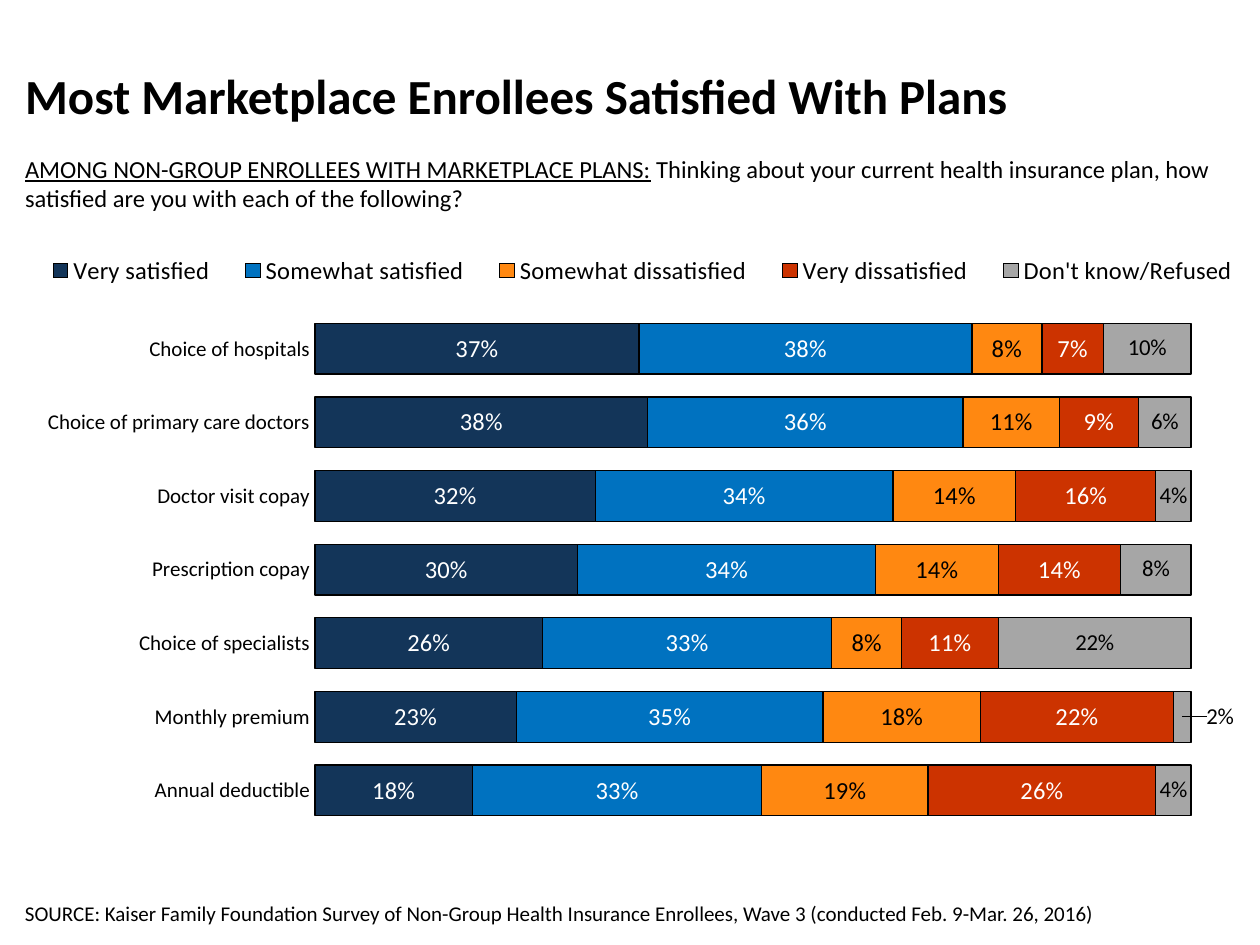
from pptx import Presentation
from pptx.chart.data import CategoryChartData
from pptx.dml.color import RGBColor
from pptx.enum.chart import XL_CHART_TYPE, XL_LEGEND_POSITION, XL_TICK_MARK
from pptx.enum.text import MSO_ANCHOR, PP_ALIGN
from pptx.oxml import parse_xml
from pptx.oxml.ns import nsdecls
from pptx.util import Inches, Pt

BAR_STACKED = XL_CHART_TYPE.BAR_STACKED
LEGEND_TOP = XL_LEGEND_POSITION.TOP
TICK_NONE = XL_TICK_MARK.NONE
MIDDLE, BOTTOM = MSO_ANCHOR.MIDDLE, MSO_ANCHOR.BOTTOM
LEFT = PP_ALIGN.LEFT

FONT = "Calibri"
BLACK = RGBColor(0x00, 0x00, 0x00)
WHITE = RGBColor(0xFF, 0xFF, 0xFF)
NAVY = RGBColor(0x13, 0x35, 0x59)
BLUE = RGBColor(0x00, 0x72, 0xC0)
ORANGE = RGBColor(0xFF, 0x88, 0x11)
RED = RGBColor(0xCC, 0x33, 0x00)
GREY = RGBColor(0xA6, 0xA6, 0xA6)

PLAN_FEATURES = ["Choice of hospitals", "Choice of primary care doctors",
                 "Doctor visit copay", "Prescription copay",
                 "Choice of specialists", "Monthly premium",
                 "Annual deductible"]

# Answer, percentages per feature, bar colour, label colour, label size
ANSWERS = [
    ("Very satisfied", [37, 38, 32, 30, 26, 23, 18], NAVY, WHITE, 14),
    ("Somewhat satisfied", [38, 36, 34, 34, 33, 35, 33], BLUE, WHITE, 14),
    ("Somewhat dissatisfied", [8, 11, 14, 14, 8, 18, 19], ORANGE, BLACK, 14),
    ("Very dissatisfied", [7, 9, 16, 14, 11, 22, 26], RED, WHITE, 14),
    ("Don't know/Refused", [10, 6, 4, 8, 22, 2, 4], GREY, BLACK, 13),
]


def format_font(font, size, color=BLACK, **extra):
    values = {"name": FONT, "size": Pt(size), **extra}
    for attribute, value in values.items():
        setattr(font, attribute, value)
    font.color.rgb = color


def place(shape, left, top, width, height):
    box = {"left": left, "top": top, "width": width, "height": height}
    for attribute, value in box.items():
        setattr(shape, attribute, Inches(value))


def write_runs(frame, runs, anchor):
    """Fill a frame with one left-aligned paragraph of (text, format) runs."""
    frame.word_wrap = True
    frame.vertical_anchor = anchor
    paragraph = frame.paragraphs[0]
    paragraph.alignment = LEFT
    for text, values in runs:
        run = paragraph.add_run()
        run.text = text
        format_font(run.font, **values)


def add_text(slide, box, runs, anchor=MSO_ANCHOR.TOP):
    textbox = slide.shapes.add_textbox(*map(Inches, box))
    write_runs(textbox.text_frame, runs, anchor)


def manual_layout(x, y, width=None, height=None, mode="edge", inner=False):
    parts = []
    if inner:
        parts.append('<c:layoutTarget val="inner"/>')
    if mode == "edge":
        parts.append('<c:xMode val="edge"/><c:yMode val="edge"/>')
    sizes = {"x": x, "y": y, "w": width, "h": height}
    parts += [f'<c:{tag} val="{value}"/>'
              for tag, value in sizes.items() if value is not None]
    return parse_xml(f'<c:layout {nsdecls("c")}><c:manualLayout>'
                     f'{"".join(parts)}</c:manualLayout></c:layout>')


def set_layout(parent, layout, position):
    for old in parent.findall(layout.tag):
        parent.remove(old)
    parent.insert(position, layout)


def shift_label(labels, index, x):
    """Move one value label sideways by a share of the chart width."""
    flags = "".join(f'<c:show{name} val="{int(name == "Val")}"/>' for name in
                    ("LegendKey", "Val", "CatName", "SerName", "Percent",
                     "BubbleSize"))
    label = parse_xml(f'<c:dLbl {nsdecls("c")}><c:idx val="{index}"/>'
                      f'{flags}</c:dLbl>')
    label.insert(1, manual_layout(x, 0, mode="offset"))
    labels._element.insert(0, label)


def style_series(series, color, label_color, label_size):
    series.format.fill.solid()
    series.format.fill.fore_color.rgb = color
    series.format.line.color.rgb = BLACK
    series.format.line.width = Pt(0.75)
    labels = series.data_labels
    for attribute, value in {"show_value": True, "number_format": "0%",
                             "number_format_is_linked": False}.items():
        setattr(labels, attribute, value)
    format_font(labels.font, label_size, label_color)
    return labels


def style_axes(chart):
    features = chart.category_axis
    features.reverse_order = True
    features.major_tick_mark = TICK_NONE
    features.format.line.fill.background()
    format_font(features.tick_labels.font, 12)
    shares = chart.value_axis
    for attribute, value in {"minimum_scale": 0, "maximum_scale": 1.05,
                             "has_major_gridlines": False,
                             "visible": False}.items():
        setattr(shares, attribute, value)


def add_satisfaction_chart(slide):
    data = CategoryChartData(number_format="0%")
    data.categories = PLAN_FEATURES
    for answer, percentages, *_ in ANSWERS:
        data.add_series(answer, [value / 100 for value in percentages])
    chart = slide.shapes.add_chart(BAR_STACKED, Inches(0.1), Inches(1.82),
                                   Inches(10), Inches(5.05), data).chart
    chart.has_title = False
    format_font(chart.font, 13)
    style_axes(chart)

    plot = chart.plots[0]
    for attribute, value in {"gap_width": 45, "overlap": 100,
                             "vary_by_categories": False}.items():
        setattr(plot, attribute, value)
    for series, (_, percentages, *colors) in zip(plot.series, ANSWERS):
        labels = style_series(series, *colors)
        # The narrowest bar has its label beside it
        for index, value in enumerate(percentages):
            if value < 4:
                shift_label(labels, index, 0.03)

    chart.has_legend = True
    chart.legend.position = LEGEND_TOP
    chart.legend.include_in_layout = False
    format_font(chart.legend.font, 14)
    set_layout(chart.legend._element, manual_layout(0.01, 0.02, 0.98, 0.09), 1)
    plot_area = chart._chartSpace.chart.plotArea
    set_layout(plot_area, manual_layout(0.24, 0.13, 0.73, 0.81, inner=True), 0)


def main():
    presentation = Presentation()
    presentation.slide_width = Inches(10)
    presentation.slide_height = Inches(7.5)
    slide = presentation.slides.add_slide(presentation.slide_layouts[5])

    # Title
    title = slide.shapes.title
    place(title, 0.1, 0.25, 9.8, 1)
    write_runs(title.text_frame,
               [("Most Marketplace Enrollees Satisfied With Plans",
                 {"size": 28, "bold": True})], MIDDLE)

    # Answers for each plan feature
    add_satisfaction_chart(slide)

    # Survey question
    add_text(slide, (0.1, 1.17, 9.68, 0.57), [
        ("AMONG NON-GROUP ENROLLEES WITH MARKETPLACE PLANS:",
         {"size": 14, "underline": True}),
        (" ", {"size": 13}),
        ("Thinking about your current health insurance plan, how satisfied "
         "are you with each of the following?", {"size": 14})])

    # Source line
    add_text(slide, (0.1, 6.8, 9.1, 0.6), [
        ("SOURCE: Kaiser Family Foundation Survey of Non-Group Health "
         "Insurance Enrollees, Wave 3 (conducted Feb. 9-Mar. 26, 2016)",
         {"size": 12})], BOTTOM)

    presentation.save("out.pptx")


if __name__ == "__main__":
    main()
